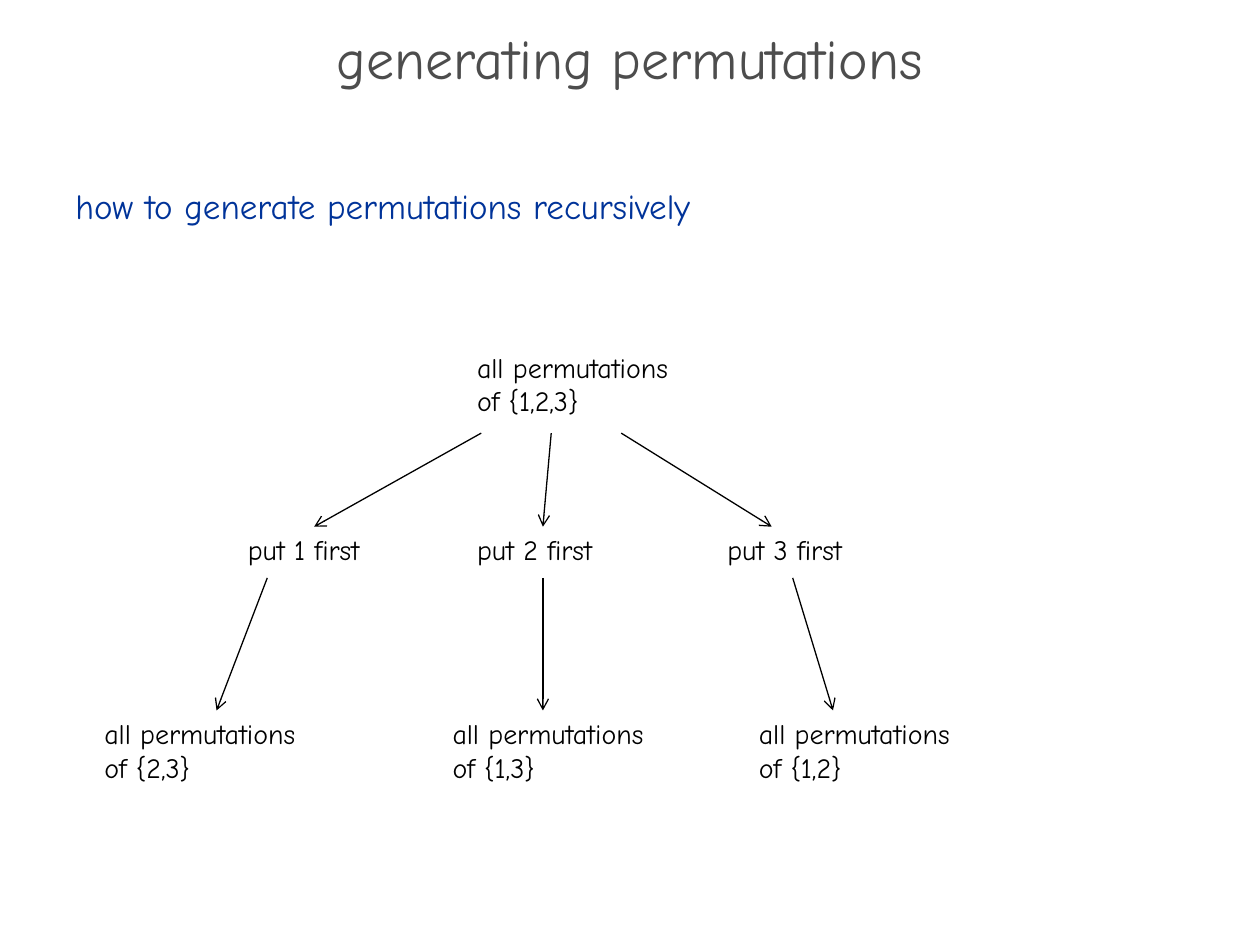
import pptx
import pptx.util
import pptx.dml.color
import pptx.enum.shapes
import pptx.enum.text
import pptx.oxml
import pptx.oxml.ns

Pt = pptx.util.Pt
PP_ALIGN = pptx.enum.text.PP_ALIGN
ANCHOR = pptx.enum.text.MSO_ANCHOR
AUTO_SIZE = pptx.enum.text.MSO_AUTO_SIZE


def color(hex_string):
    return pptx.dml.color.RGBColor.from_string(hex_string)


def write(shape, text, size=16, ink="000000", align=PP_ALIGN.LEFT, anchor=ANCHOR.TOP,
          wrap=True, fit=AUTO_SIZE.NONE, line_spacing=1.0, space_after=0):
    """Put text in a shape, one paragraph for each line."""
    frame = shape.text_frame
    frame.text = text
    frame.word_wrap = wrap
    frame.auto_size = fit
    frame.vertical_anchor = anchor
    for paragraph in frame.paragraphs:
        paragraph.alignment = align
        paragraph.line_spacing = line_spacing
        paragraph.space_before = Pt(0)
        paragraph.space_after = Pt(space_after)
        font = paragraph.runs[0].font
        font.name = "Comic Neue"
        font.size = Pt(size)
        font.color.rgb = color(ink)


deck = pptx.Presentation()
deck.slide_width, deck.slide_height = Pt(720), Pt(540)
slide = deck.slides.add_slide(deck.slide_layouts[5])

title = slide.shapes.title
title.left, title.top, title.width, title.height = Pt(0), Pt(19.5), Pt(720), Pt(36)
write(title, "generating permutations", size=32, ink="4D4D4D", align=PP_ALIGN.CENTER,
      anchor=ANCHOR.MIDDLE, line_spacing=0.7)

question = slide.shapes.add_textbox(Pt(36), Pt(102), Pt(660), Pt(94.5))
write(question, "how to generate permutations recursively", size=20, ink="003399",
      space_after=6)

# Tree levels: top of each row of labels, and where arrows leave and arrive
ROOT_TOP, CHOICE_TOP, REST_TOP = 196.5, 301, 406
ROOT_BOTTOM, CHOICE_BOTTOM = 247.5, 330.25
SET_SIZE, CHOICE_SIZE = (142.5, 51), (89.25, 29)

labels = [("all permutations\nof {1,2,3}", 265.5, ROOT_TOP, SET_SIZE)]
arrows = []

# first number, numbers left, left of choice, left of rest, x of arrow from the root
# to the choice, x of arrow from the choice to the rest
branches = [
    (1, "2,3", 134.5, 52.5, (275, 179.5), (152.75, 123.75)),
    (2, "1,3", 265.5, 251.5, (315, 310.25), (310.25, 310.25)),
    (3, "1,2", 408.5, 426.5, (355, 441), (453, 476)),
]
for first, rest, choice_left, rest_left, to_choice, to_rest in branches:
    labels.append((f"put {first} first", choice_left, CHOICE_TOP, CHOICE_SIZE))
    labels.append((f"all permutations\nof {{{rest}}}", rest_left, REST_TOP, SET_SIZE))
    arrows.append((to_choice, ROOT_BOTTOM, CHOICE_TOP))
    arrows.append((to_rest, CHOICE_BOTTOM, REST_TOP))

for text, left, top, (width, height) in labels:
    node = slide.shapes.add_textbox(Pt(left), Pt(top), Pt(width), Pt(height))
    write(node, text, wrap=False, fit=AUTO_SIZE.SHAPE_TO_FIT_TEXT)

for (start_x, end_x), start_y, end_y in arrows:
    arrow = slide.shapes.add_connector(
        pptx.enum.shapes.MSO_CONNECTOR.STRAIGHT,
        Pt(start_x), Pt(start_y), Pt(end_x), Pt(end_y))
    arrow.line.color.rgb = color("000000")
    arrow.line.width = Pt(0.75)
    head = pptx.oxml.parse_xml(
        f'<a:tailEnd {pptx.oxml.ns.nsdecls("a")} type="arrow"/>')
    arrow.line._get_or_add_ln().append(head)
    no_shadow = pptx.oxml.parse_xml(f'<a:effectLst {pptx.oxml.ns.nsdecls("a")}/>')
    arrow._element.spPr.append(no_shadow)

deck.save("out.pptx")
